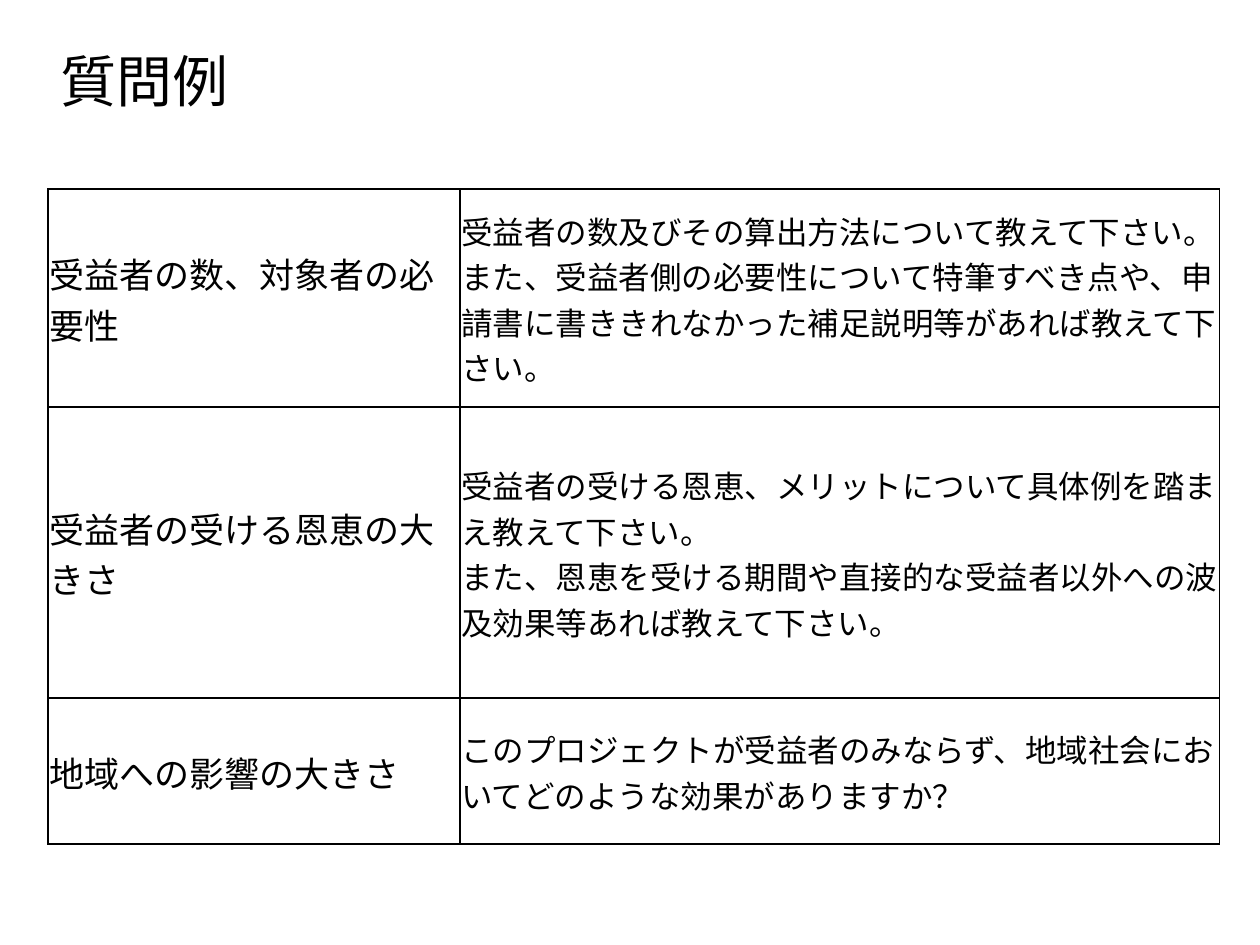
"""Build a slide with a table of sample questions."""
from lxml.etree import SubElement
from pptx import Presentation
from pptx.dml.color import RGBColor
from pptx.enum.text import MSO_ANCHOR, MSO_AUTO_SIZE, PP_ALIGN
from pptx.oxml.ns import qn
from pptx.util import Inches, Pt

COLORS = {"text": "000000", "border": "000000", "paper": "FFFFFF"}
FONT = "Noto Sans CJK JP"
COL_WIDTHS = [3.27, 6.03]
COL_SIZES = [20, 18]
ROW_HEIGHTS = [1.73, 2.31, 1.16]
QUESTIONS = [
    (["受益者の数、対象者の必要性"],
     ["受益者の数及びその算出方法について教えて下さい。",
      "また、受益者側の必要性について特筆すべき点や、申請書に書ききれなかった補足説明等があれば教えて下さい。"]),
    (["受益者の受ける恩恵の大きさ"],
     ["受益者の受ける恩恵、メリットについて具体例を踏まえ教えて下さい。",
      "また、恩恵を受ける期間や直接的な受益者以外への波及効果等あれば教えて下さい。"]),
    (["地域への影響の大きさ"],
     ["このプロジェクトが受益者のみならず、地域社会においてどのような効果がありますか？"]),
]


def add_lines(p, lines, size):
    p.alignment = PP_ALIGN.LEFT
    for i, line in enumerate(lines):
        if i:
            p.add_line_break()
        r = p.add_run()
        r.text = line
        r.font.size = Pt(size)
        r.font.name = FONT
        r.font.color.rgb = RGBColor.from_string(COLORS["text"])
        SubElement(r.font._element, qn("a:ea"), typeface=FONT)


def add_borders(cell):
    tcPr = cell._tc.get_or_add_tcPr()
    for i, side in enumerate(("a:lnL", "a:lnR", "a:lnT", "a:lnB")):
        ln = tcPr.makeelement(qn(side), {"w": str(Pt(1))})
        fill = SubElement(ln, qn("a:solidFill"))
        SubElement(fill, qn("a:srgbClr"), val=COLORS["border"])
        tcPr.insert(i, ln)


prs = Presentation()
prs.slide_width, prs.slide_height = Inches(10), Inches(7.5)
slide = prs.slides.add_slide(prs.slide_layouts[5])

title = slide.shapes.title
title.left, title.top = Inches(0.38), Inches(0.38)
title.width, title.height = Inches(9.24), Inches(0.64)
tf = title.text_frame
tf.word_wrap = True
tf.auto_size = MSO_AUTO_SIZE.SHAPE_TO_FIT_TEXT
tf.vertical_anchor = MSO_ANCHOR.TOP
p = tf.paragraphs[0]
p.line_spacing = 0.9
add_lines(p, ["質問例"], 32)

table = slide.shapes.add_table(
    len(ROW_HEIGHTS), len(COL_WIDTHS), Inches(0.38), Inches(1.5),
    Inches(sum(COL_WIDTHS)), Inches(sum(ROW_HEIGHTS))).table
table.first_row = False
table.horz_banding = False
for col, width in zip(table.columns, COL_WIDTHS):
    col.width = Inches(width)
for row, height, texts in zip(table.rows, ROW_HEIGHTS, QUESTIONS):
    row.height = Inches(height)
    for cell, lines, size in zip(row.cells, texts, COL_SIZES):
        cell.vertical_anchor = MSO_ANCHOR.MIDDLE
        cell.margin_left = cell.margin_right = cell.margin_top = Inches(0.01)
        cell.margin_bottom = Inches(0)
        cell.fill.solid()
        cell.fill.fore_color.rgb = RGBColor.from_string(COLORS["paper"])
        add_borders(cell)
        add_lines(cell.text_frame.paragraphs[0], lines, size)

prs.save("out.pptx")
